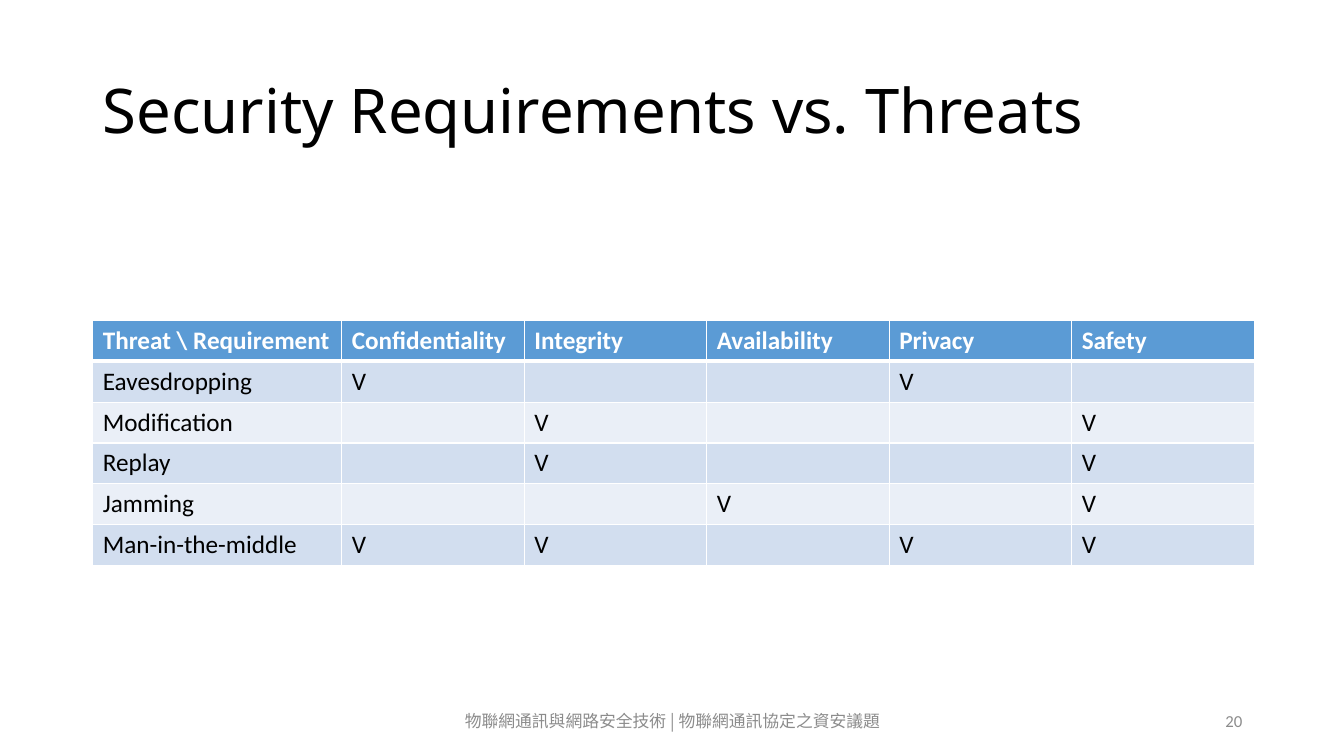
from lxml import etree
from pptx import Presentation
from pptx.dml.color import RGBColor
from pptx.enum.text import MSO_ANCHOR, PP_ALIGN
from pptx.oxml.ns import qn
from pptx.util import Inches, Pt

MIDDLE = MSO_ANCHOR.MIDDLE
LEFT, CENTER, RIGHT = PP_ALIGN.LEFT, PP_ALIGN.CENTER, PP_ALIGN.RIGHT
BLANK = 6
COLORS = {"head": "5B9BD5", "odd": "D2DEEF", "even": "EAEFF7",
          "white": "FFFFFF", "black": "000000", "gray": "8C8C8C"}
HEADS = ["Threat \\ Requirement", "Confidentiality", "Integrity",
         "Availability", "Privacy", "Safety"]
THREATS = {
    "Eavesdropping": ["Confidentiality", "Privacy"],
    "Modification": ["Integrity", "Safety"],
    "Replay": ["Integrity", "Safety"],
    "Jamming": ["Availability", "Safety"],
    "Man-in-the-middle": ["Confidentiality", "Integrity", "Privacy", "Safety"],
}


def color(name):
    """Return the named colour."""
    return RGBColor.from_string(COLORS[name])


def style(run, hue, **values):
    """Set the font of a run, for Latin and East Asian text."""
    for key, value in values.items():
        setattr(run.font, key, value)
    run.font.color.rgb = color(hue)
    face = etree.SubElement(run.font._element, qn("a:ea"))
    face.set("typeface", values["name"])


def add_text(slide, place, text, hue, align=LEFT, spacing=1.0, **font):
    """Add a text box with one middle-anchored paragraph."""
    frame = slide.shapes.add_textbox(*map(Inches, place)).text_frame
    frame.word_wrap = True
    frame.vertical_anchor = MIDDLE
    para = frame.paragraphs[0]
    para.alignment = align
    para.line_spacing = spacing
    run = para.add_run()
    run.text = text
    style(run, hue, **font)


def add_edges(cell, widths):
    """Draw white borders of the given widths on a cell."""
    props = cell._tc.get_or_add_tcPr()
    for side, width in widths.items():
        line = etree.SubElement(props, qn(f"a:ln{side}"), w=str(Pt(width)))
        fill = etree.SubElement(line, qn("a:solidFill"))
        etree.SubElement(fill, qn("a:srgbClr"), val=COLORS["white"])


def fill_cell(cell, row, text):
    """Write and colour a cell according to its row."""
    add_edges(cell, {"L": 1, "R": 1, "T": 3 if row == 1 else 1,
                     "B": 3 if row == 0 else 1})
    cell.fill.solid()
    band = "odd" if row % 2 else "even"
    cell.fill.fore_color.rgb = color(band if row else "head")
    if text:
        run = cell.text_frame.paragraphs[0].add_run()
        run.text = text
        style(run, "black" if row else "white",
              name="Calibri", size=Pt(18), bold=row == 0)


def add_matrix(slide):
    """Add the table of threats against requirements."""
    rows = [HEADS] + [
        [threat] + ["V" if need in needs else "" for need in HEADS[1:]]
        for threat, needs in THREATS.items()]
    place = map(Inches, (0.92, 3.18, 11.5, 2.43))
    table = slide.shapes.add_table(len(rows), len(HEADS), *place).table
    for col, column in enumerate(table.columns):
        column.width = Inches(1.81 if col else 2.47)
    for row, texts in enumerate(rows):
        for col, text in enumerate(texts):
            fill_cell(table.cell(row, col), row, text)


def main():
    """Build and save the slide."""
    deck = Presentation()
    deck.slide_width, deck.slide_height = Inches(13.33), Inches(7.5)
    slide = deck.slides.add_slide(deck.slide_layouts[BLANK])
    add_text(slide, (0.92, 0.4, 11.5, 1.45),
             "Security Requirements vs. Threats", "black",
             spacing=0.9, name="Noto Sans", size=Pt(44))
    add_matrix(slide)
    add_text(slide, (4.42, 6.95, 4.5, 0.4),
             "物聯網通訊與網路安全技術 | 物聯網通訊協定之資安議題", "gray",
             CENTER, name="Noto Sans CJK TC", size=Pt(12))
    add_text(slide, (9.42, 6.95, 3, 0.4), "20", "gray",
             RIGHT, name="Calibri", size=Pt(12))
    deck.save("out.pptx")


if __name__ == "__main__":
    main()
